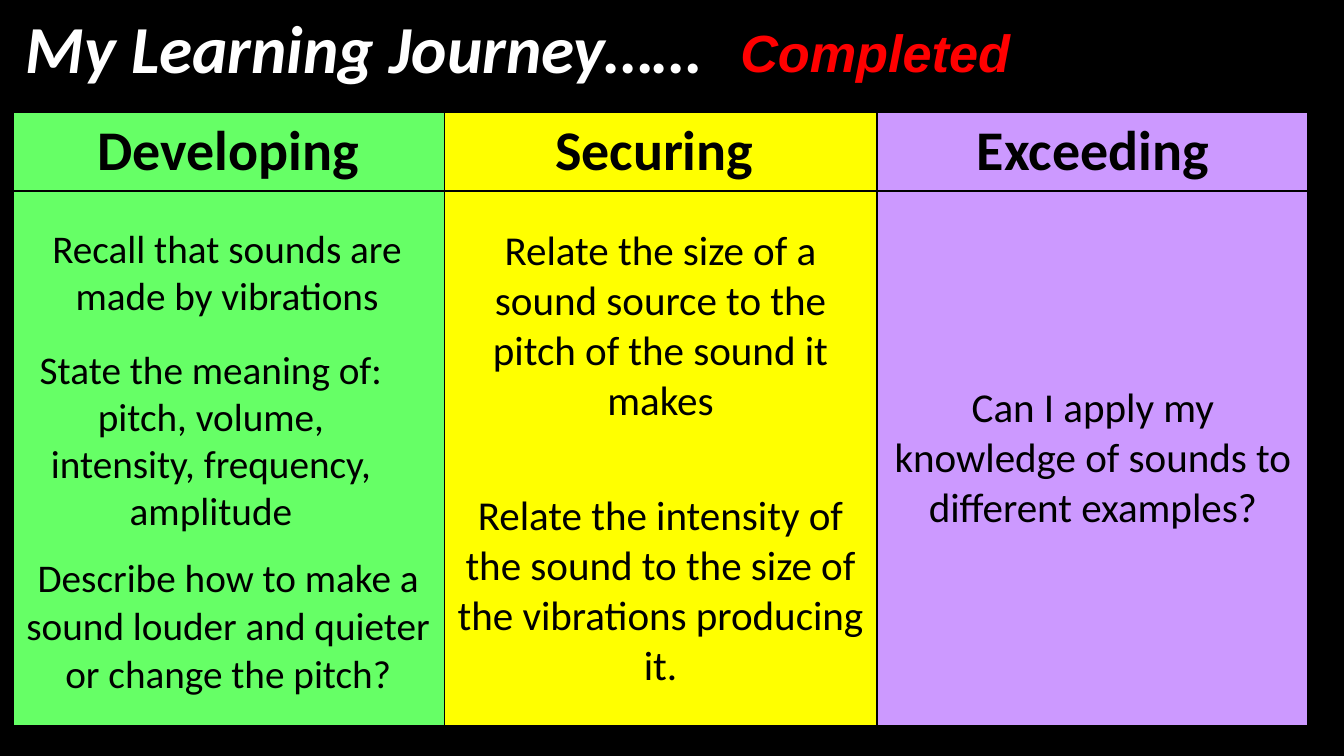
from lxml.etree import SubElement
from pptx import Presentation
from pptx.dml.color import RGBColor
from pptx.enum.text import MSO_ANCHOR, MSO_AUTO_SIZE, PP_ALIGN
from pptx.oxml.ns import qn
from pptx.util import Inches, Pt

BLACK = RGBColor(0x00, 0x00, 0x00)
WHITE = RGBColor(0xFF, 0xFF, 0xFF)
RED = RGBColor(0xFF, 0x00, 0x00)
GREEN = RGBColor(0x66, 0xFF, 0x66)
YELLOW = RGBColor(0xFF, 0xFF, 0x00)
PURPLE = RGBColor(0xCC, 0x99, 0xFF)

SLIDE_W = 10
SLIDE_H = SLIDE_W * 9 / 16
LEFT, TOP = 0.09, 0.83
TABLE_W = 9.65
ROW_H = (0.59, 3.99)
OUTER, INNER = 2.25, 1

# heading, fill, text size, paragraphs, vertical anchor, bottom margin
LEVELS = [
    ("Developing", GREEN, 21,
     ["Describe how to make a sound louder and quieter or change the pitch?"],
     MSO_ANCHOR.BOTTOM, 0.21),
    ("Securing ", YELLOW, 22,
     ["Relate the size of a sound source to the pitch of the sound it makes",
      "Relate the intensity of the sound to the size of the vibrations producing it."],
     MSO_ANCHOR.MIDDLE, 0.04),
    ("Exceeding", PURPLE, 22,
     ["Can I apply my knowledge of sounds to different examples?"],
     MSO_ANCHOR.MIDDLE, 0.04),
]


def write(tf, paragraphs, size, color=BLACK, font="Calibri", bold=False,
          italic=False, align=PP_ALIGN.CENTER, gap=0):
    """Fill a text frame; gap is the space in points between paragraphs."""
    tf.word_wrap = True
    for i, text in enumerate(paragraphs):
        p = tf.paragraphs[0] if i == 0 else tf.add_paragraph()
        p.text = text
        p.alignment = align
        p.space_before = Pt(gap if i else 0)
        f = p.runs[0].font
        f.name, f.size, f.bold, f.italic = font, Pt(size), bold, italic
        f.color.rgb = color


def add_title(s, text):
    sp = s.shapes.title
    sp.left, sp.top = Inches(LEFT), 0
    sp.width, sp.height = Inches(7.18), Inches(1.41)
    tf = sp.text_frame
    tf.auto_size = MSO_AUTO_SIZE.NONE
    tf.vertical_anchor = MSO_ANCHOR.TOP
    write(tf, [text], 36, WHITE, bold=True, italic=True, align=PP_ALIGN.LEFT)


def add_text(s, box, text, size, **style):
    sp = s.shapes.add_textbox(*(Inches(v) for v in box))
    write(sp.text_frame, [text], size, **style)


def set_borders(cell, **widths):
    """Draw black cell borders; widths are points keyed by side L, R, T, B."""
    tc_pr = cell._tc.get_or_add_tcPr()
    for side, width in widths.items():
        ln = SubElement(tc_pr, qn(f"a:ln{side}"), w=str(Pt(width)))
        SubElement(SubElement(ln, qn("a:solidFill")), qn("a:srgbClr"), val=str(BLACK))


def format_cell(cell, row, col, fill, anchor=MSO_ANCHOR.MIDDLE, bottom=0.04):
    set_borders(cell,
                L=OUTER if col == 0 else INNER,
                R=OUTER if col == len(LEVELS) - 1 else INNER,
                T=OUTER if row == 0 else INNER,
                B=OUTER if row == len(ROW_H) - 1 else INNER)
    cell.fill.solid()
    cell.fill.fore_color.rgb = fill
    cell.vertical_anchor = anchor
    cell.margin_left = cell.margin_right = Inches(0.07)
    cell.margin_top, cell.margin_bottom = Inches(0.04), Inches(bottom)


def add_levels_table(s):
    n = len(LEVELS)
    table = s.shapes.add_table(len(ROW_H), n, Inches(LEFT), Inches(TOP),
                               Inches(TABLE_W), Inches(sum(ROW_H))).table
    table.first_row = table.horz_banding = False
    for row, height in zip(table.rows, ROW_H):
        row.height = Inches(height)
    for c, (heading, fill, size, goals, anchor, bottom) in enumerate(LEVELS):
        table.columns[c].width = Inches(TABLE_W / n)
        head, body = table.cell(0, c), table.cell(1, c)
        format_cell(head, 0, c, fill)
        write(head.text_frame, [heading], 30, bold=True)
        format_cell(body, 1, c, fill, anchor, bottom)
        write(body.text_frame, goals, size, gap=35)


def main():
    prs = Presentation()
    prs.slide_width, prs.slide_height = Inches(SLIDE_W), Inches(SLIDE_H)
    s = prs.slides.add_slide(prs.slide_layouts[5])
    s.background.fill.solid()
    s.background.fill.fore_color.rgb = BLACK

    add_title(s, "My Learning Journey……")
    add_levels_table(s)
    add_text(s, (0.26, 1.62, 2.86, 1.04),
             "Recall that sounds are made by vibrations", 21)
    add_text(s, (0.14, 2.52, 2.86, 1.51),
             "State the meaning of: pitch, volume, intensity, frequency, amplitude", 21)
    add_text(s, (5.41, 0.1, 2.73, 0.57), "Completed", 28, color=RED, font="Arial",
             bold=True, italic=True, align=PP_ALIGN.LEFT)
    prs.save("out.pptx")


if __name__ == "__main__":
    main()
